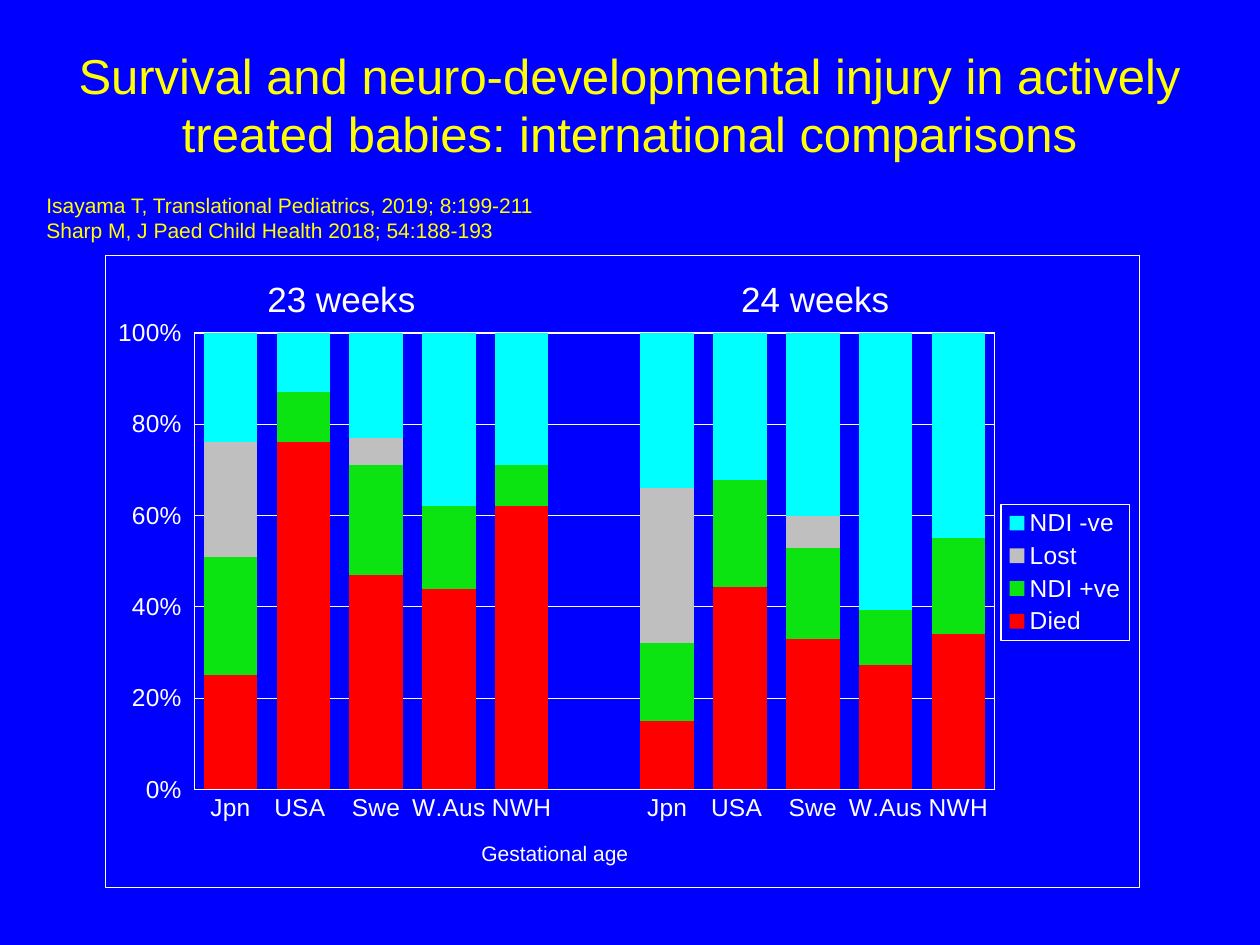
import lxml.etree
import pptx
import pptx.chart.data
import pptx.dml.color
import pptx.enum.chart
import pptx.enum.text
import pptx.oxml
import pptx.oxml.ns
import pptx.util

Inches = pptx.util.Inches
Pt = pptx.util.Pt
RGBColor = pptx.dml.color.RGBColor
Align = pptx.enum.text.PP_ALIGN
qn = pptx.oxml.ns.qn

BLUE = RGBColor(0x00, 0x00, 0xFF)
YELLOW = RGBColor(0xFF, 0xFF, 0x00)
WHITE = RGBColor(0xFF, 0xFF, 0xFF)
RED = RGBColor(0xFF, 0x00, 0x00)
GREEN = RGBColor(0x0C, 0xE4, 0x11)
GREY = RGBColor(0xBF, 0xBF, 0xBF)
CYAN = RGBColor(0x00, 0xFF, 0xFF)
FONT = "Arial"

TITLE = ("Survival and neuro-developmental injury in actively "
         "treated babies: international comparisons")
REFERENCES = [
    "Isayama T, Translational Pediatrics, 2019; 8:199-211",
    "Sharp M, J Paed Child Health 2018; 54:188-193",
]
# Heading and the horizontal centre of its group of columns
GROUPS = [("23 weeks", 2.71), ("24 weeks", 6.47)]
CENTRES = ["Jpn", "USA ", "Swe", "W.Aus", "NWH"]
CATEGORIES = CENTRES + [""] + CENTRES
SERIES = [
    ("Died", RED, [25, 76, 47, 44, 62, None, 15, 44, 33, 27, 34]),
    ("NDI +ve", GREEN, [26, 11, 24, 18, 9, None, 17, 23, 20, 12, 21]),
    ("Lost", GREY, [25, 0, 6, 0, 0, None, 34, 0, 7, 0, 0]),
    ("NDI -ve", CYAN, [24, 13, 23, 38, 29, None, 34, 32, 40, 60, 45]),
]
CHART_BOX = (0.83, 2.02, 8.22, 5.03)


def style_font(font, size, color):
    font.name = FONT
    font.size = Pt(size)
    font.bold = False
    font.color.rgb = color


def white_line(line):
    line.color.rgb = WHITE
    line.width = Pt(0.75)


def write(text_frame, lines, size, color, alignment):
    text_frame.word_wrap = True
    for index, line in enumerate(lines):
        paragraph = text_frame.paragraphs[0] if index == 0 else text_frame.add_paragraph()
        paragraph.alignment = alignment
        run = paragraph.add_run()
        run.text = line
        style_font(run.font, size, color)


def add_text(slide, box, lines, size, color, alignment):
    shape = slide.shapes.add_textbox(*map(Inches, box))
    write(shape.text_frame, lines, size, color, alignment)


def white_border():
    return pptx.oxml.parse_xml(
        f'<c:spPr {pptx.oxml.ns.nsdecls("c", "a")}><a:noFill/><a:ln w="9525"><a:solidFill>'
        f'<a:srgbClr val="{WHITE}"/></a:solidFill></a:ln></c:spPr>')


def set_layout(parent, index, target=None, **fractions):
    """Place a chart part by hand, in fractions of the chart's size."""
    for old in parent.findall(qn("c:layout")):
        parent.remove(old)
    layout = lxml.etree.Element(qn("c:layout"))
    manual = lxml.etree.SubElement(layout, qn("c:manualLayout"))
    settings = {"layoutTarget": target} if target else {}
    settings.update(xMode="edge", yMode="edge", **fractions)
    for name, value in settings.items():
        lxml.etree.SubElement(manual, qn(f"c:{name}"), val=str(value))
    parent.insert(index, layout)


def add_outcome_chart(slide):
    data = pptx.chart.data.CategoryChartData()
    data.categories = CATEGORIES
    for name, _, values in SERIES:
        data.add_series(name, values)
    chart = slide.shapes.add_chart(
        pptx.enum.chart.XL_CHART_TYPE.COLUMN_STACKED_100,
        *map(Inches, CHART_BOX), data).chart
    chart.has_title = False
    style_font(chart.font, 14, WHITE)

    plot = chart.plots[0]
    plot.gap_width = 36
    plot.overlap = 100
    plot.vary_by_categories = False
    for series, (_, color, _) in zip(plot.series, SERIES):
        series.format.fill.solid()
        series.format.fill.fore_color.rgb = color
        series.invert_if_negative = False

    tick_mark = pptx.enum.chart.XL_TICK_MARK
    category_axis = chart.category_axis
    category_axis.major_tick_mark = tick_mark.NONE
    white_line(category_axis.format.line)
    style_font(category_axis.tick_labels.font, 14, WHITE)
    write(category_axis.axis_title.text_frame, ["Gestational age"], 12, WHITE, Align.CENTER)

    value_axis = chart.value_axis
    value_axis.minimum_scale = 0
    value_axis.maximum_scale = 1
    value_axis.major_unit = 0.2
    value_axis.major_tick_mark = tick_mark.OUTSIDE
    value_axis.format.line.fill.background()
    value_axis.has_major_gridlines = True
    white_line(value_axis.major_gridlines.format.line)
    style_font(value_axis.tick_labels.font, 14, WHITE)
    value_axis.tick_labels.number_format = "0%"
    value_axis.tick_labels.number_format_is_linked = False

    chart.has_legend = True
    chart.legend.position = pptx.enum.chart.XL_LEGEND_POSITION.RIGHT
    chart.legend.include_in_layout = False
    style_font(chart.legend.font, 14, WHITE)

    chart_space = chart.element
    plot_area = chart_space.find(".//" + qn("c:plotArea"))
    legend = chart_space.find(".//" + qn("c:legend"))
    axis_title = plot_area.find(".//" + qn("c:title"))
    set_layout(plot_area, 0, "inner", x=0.086, y=0.123, w=0.774, h=0.722)
    set_layout(legend, 1, x=0.866, y=0.394, w=0.124, h=0.215)
    set_layout(axis_title, 1, x=0.36, y=0.92)
    plot_area.append(white_border())
    legend.find(qn("c:overlay")).addnext(white_border())
    chart_space.find(qn("c:chart")).addnext(white_border())


def main():
    presentation = pptx.Presentation()
    presentation.slide_width = Inches(10)
    presentation.slide_height = Inches(7.5)
    slide = presentation.slides.add_slide(presentation.slide_layouts[5])
    slide.background.fill.solid()
    slide.background.fill.fore_color.rgb = BLUE

    title = slide.shapes.title
    title.left, title.top, title.width, title.height = map(Inches, (0.03, 0.2, 9.93, 1.25))
    title.text_frame.vertical_anchor = pptx.enum.text.MSO_ANCHOR.MIDDLE
    write(title.text_frame, [TITLE], 28, YELLOW, Align.CENTER)

    add_text(slide, (0.27, 1.48, 9.53, 0.5), REFERENCES, 12, YELLOW, Align.LEFT)
    add_outcome_chart(slide)
    heading_width = 1.8
    for heading, center in GROUPS:
        add_text(slide, (center - heading_width / 2, 2.15, heading_width, 0.44),
                 [heading], 20, WHITE, Align.CENTER)
    presentation.save("out.pptx")


if __name__ == "__main__":
    main()
